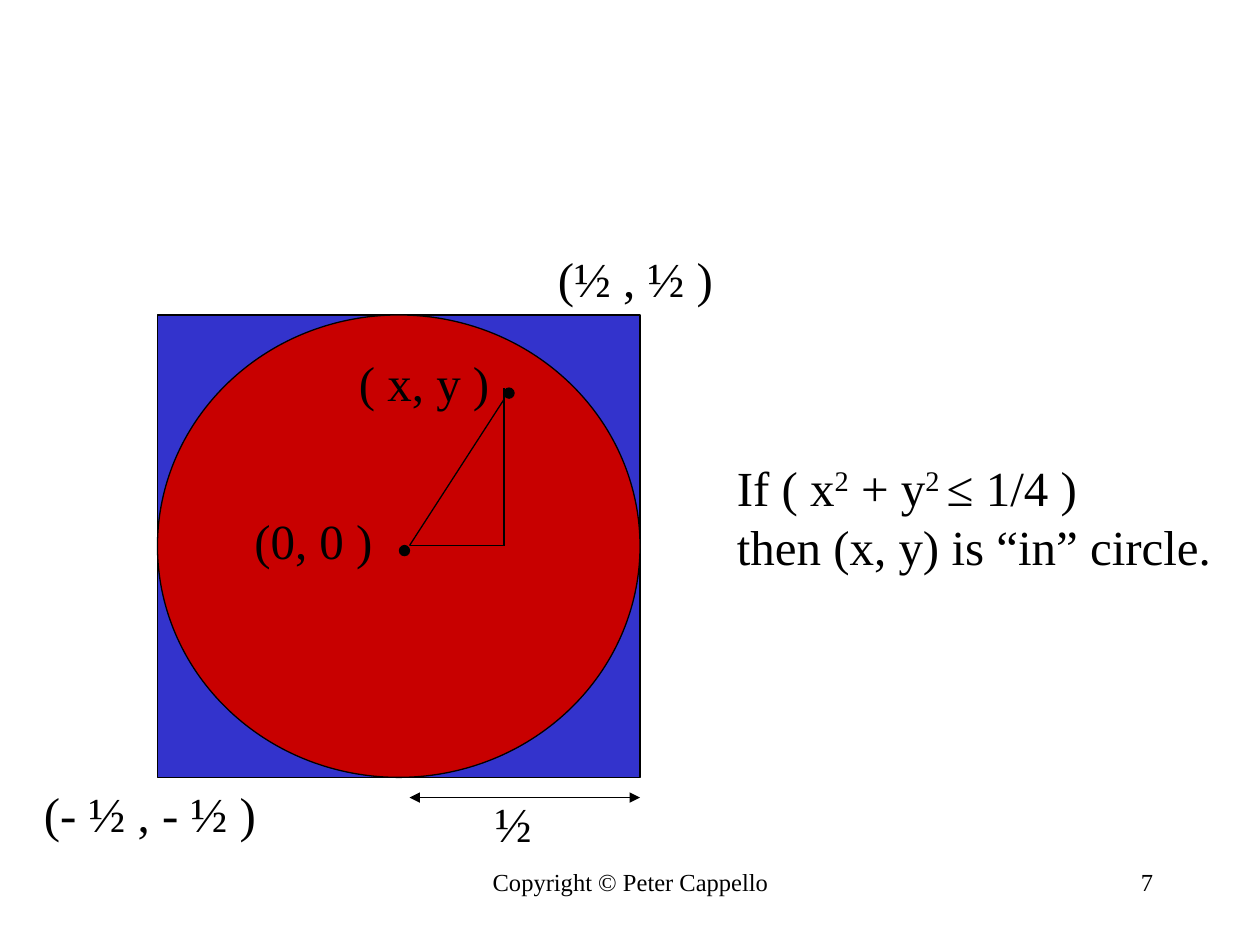
from pptx import Presentation
from pptx.dml.color import RGBColor
from pptx.enum.shapes import MSO_CONNECTOR, MSO_SHAPE
from pptx.enum.text import MSO_AUTO_SIZE, PP_ALIGN
from pptx.oxml.ns import qn
from pptx.util import Inches, Pt
from lxml.etree import SubElement

THEME = {
    "font": "Times New Roman", "body": 28, "footer": 14,
    "ink": "000000", "square": "3333CC", "circle": "C80000",
    "thin": 0.75, "leg": 1, "superscript": "30000",
}

# Content: a paragraph is a list of (text, is superscript)
LABELS = [
    ("(0, 0 )", (1.92, 4, 1.14, 0.57)),
    ("( x, y )", (2.75, 2.75, 1.24, 0.57)),
    ("½", (3.83, 6.25, 0.49, 0.57)),
    ("(- ½ , - ½ )", (0.25, 6.17, 1.99, 0.57)),
    ("(½ , ½ )", (4.33, 1.92, 1.53, 0.57)),
]
RULE = [
    [("If ( x", False), ("2", True), (" + y", False), ("2 ", True), ("≤ 1/4 )", False)],
    [("then (x, y) is “in” circle.", False)],
]
RULE_BOX = (5.75, 3.58, 3.99, 1.04)
FOOTERS = [
    ("Copyright © Peter Cappello", (3.42, 6.83, 3.17, 0.5), PP_ALIGN.CENTER),
    ("7", (7.17, 6.83, 2.08, 0.5), PP_ALIGN.RIGHT),
]

# Geometry
SQUARE = (1.25, 2.5, 3.83, 3.67)
DOT = 0.08
ORIGIN_DOT, POINT_DOT = (3.17, 4.33), (4, 3.08)
ORIGIN, CORNER = (3.25, 4.33), (4, 4.33)
RADIUS_Y = 6.33
RIGHT_EDGE = SQUARE[0] + SQUARE[2]
LINES = [
    (ORIGIN, CORNER, THEME["leg"], False),
    (POINT_DOT, CORNER, THEME["leg"], False),
    (ORIGIN, (4, 3.17), THEME["thin"], False),
    ((ORIGIN[0], RADIUS_Y), (RIGHT_EDGE, RADIUS_Y), THEME["thin"], True),
]


def color(name):
    return RGBColor.from_string(THEME[name])


def add_figure(s, kind, box, fill):
    sp = s.shapes.add_shape(kind, *map(Inches, box))
    sp.shadow.inherit = False
    sp.fill.solid()
    sp.fill.fore_color.rgb = color(fill)
    sp.line.color.rgb = color("ink")
    sp.line.width = Pt(THEME["thin"])


def add_line(s, start, end, width, arrows):
    cx = s.shapes.add_connector(MSO_CONNECTOR.STRAIGHT, *map(Inches, start + end))
    cx.line.color.rgb = color("ink")
    cx.line.width = Pt(width)
    if arrows:
        ln = cx.line._get_or_add_ln()
        for tag in ("a:headEnd", "a:tailEnd"):
            SubElement(ln, qn(tag), type="triangle")
    SubElement(cx._element.spPr, qn("a:effectLst"))


def add_text(s, paragraphs, box, size="body", align=PP_ALIGN.LEFT, wrap=False):
    tf = s.shapes.add_textbox(*map(Inches, box)).text_frame
    fit = MSO_AUTO_SIZE.NONE if wrap else MSO_AUTO_SIZE.SHAPE_TO_FIT_TEXT
    for key, value in {"word_wrap": wrap, "auto_size": fit}.items():
        setattr(tf, key, value)
    for i, runs in enumerate(paragraphs):
        p = tf.add_paragraph() if i else tf.paragraphs[0]
        p.alignment = align
        for text, raised in runs:
            r = p.add_run()
            r.text = text
            for key, value in {"name": THEME["font"], "size": Pt(THEME[size])}.items():
                setattr(r.font, key, value)
            r.font.color.rgb = color("ink")
            if raised:
                r._r.get_or_add_rPr().set("baseline", THEME["superscript"])


def main():
    prs = Presentation()
    prs.slide_width, prs.slide_height = Inches(10), Inches(7.5)
    s = prs.slides.add_slide(prs.slide_layouts[6])

    # Footer
    for text, box, align in FOOTERS:
        add_text(s, [[(text, False)]], box, "footer", align, wrap=True)

    # Square, inscribed circle and the two points
    add_figure(s, MSO_SHAPE.RECTANGLE, SQUARE, "square")
    add_figure(s, MSO_SHAPE.OVAL, SQUARE, "circle")
    for dot in (ORIGIN_DOT, POINT_DOT):
        add_figure(s, MSO_SHAPE.OVAL, dot + (DOT, DOT), "ink")

    # Triangle and radius arrow
    for line in LINES:
        add_line(s, *line)

    # Labels and the circle rule
    for text, box in LABELS:
        add_text(s, [[(text, False)]], box)
    add_text(s, RULE, RULE_BOX)

    prs.save("out.pptx")


if __name__ == "__main__":
    main()
